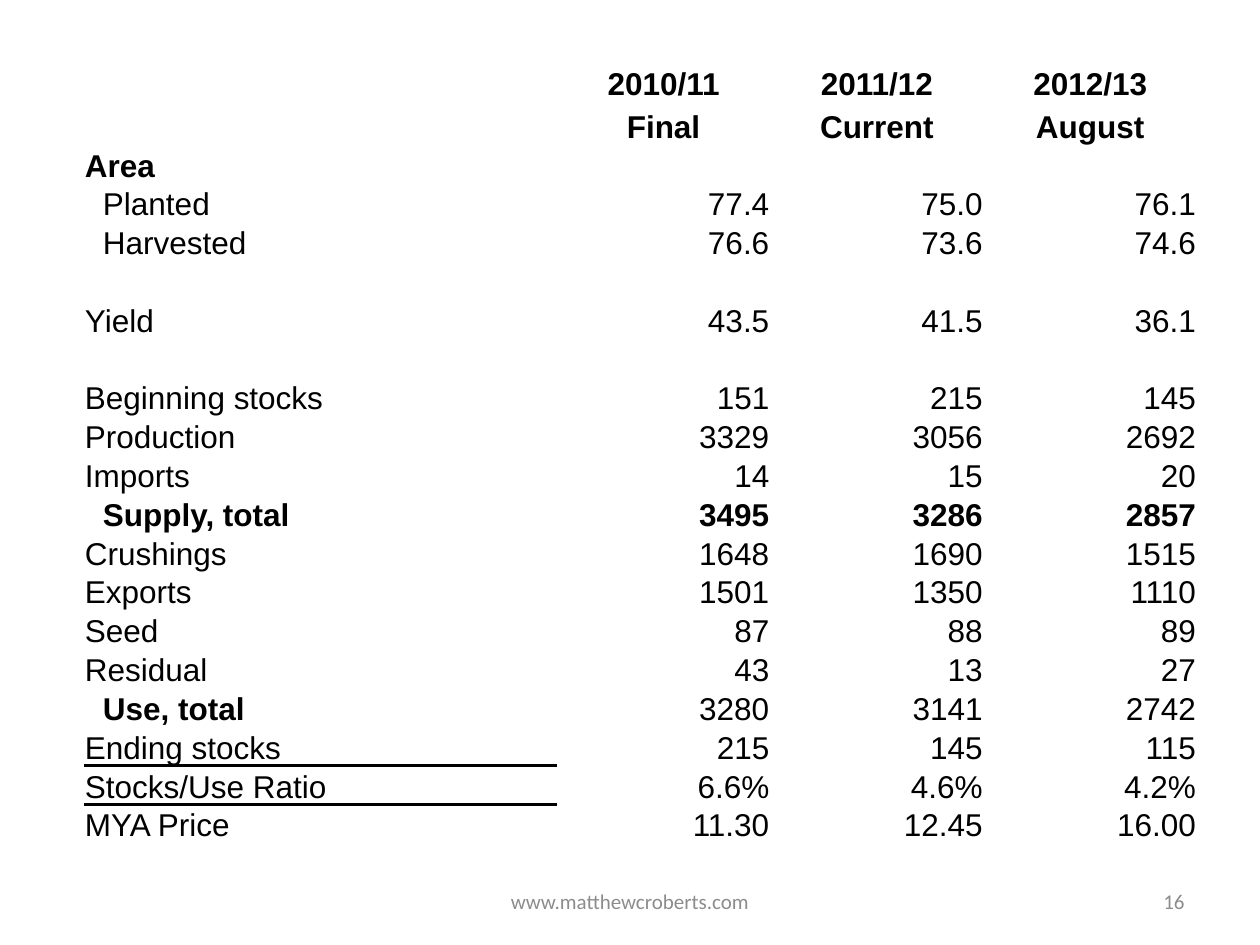
from dataclasses import dataclass

from lxml import etree
from pptx import Presentation
from pptx.dml.color import RGBColor
from pptx.enum.text import MSO_ANCHOR, PP_ALIGN
from pptx.oxml.ns import qn
from pptx.util import Emu, Pt

LEFT, CENTER, RIGHT = PP_ALIGN.LEFT, PP_ALIGN.CENTER, PP_ALIGN.RIGHT
MIDDLE, BOTTOM = MSO_ANCHOR.MIDDLE, MSO_ANCHOR.BOTTOM
EMU_PER_PX = 914400 // 126
PLAIN_TABLE_STYLE = "{2D5ABB26-0587-4C30-8999-92F81FD0307C}"

HEADINGS = [("", "2010/11", "2011/12", "2012/13"), ("", "Final", "Current", "August")]
BALANCE = [
    ("Area", "", "", ""),
    ("Planted", "77.4", "75.0", "76.1"),
    ("Harvested", "76.6", "73.6", "74.6"),
    ("", "", "", ""),
    ("Yield", "43.5", "41.5", "36.1"),
    ("", "", "", ""),
    ("Beginning stocks", "151", "215", "145"),
    ("Production", "3329", "3056", "2692"),
    ("Imports", "14", "15", "20"),
    ("Supply, total", "3495", "3286", "2857"),
    ("Crushings", "1648", "1690", "1515"),
    ("Exports", "1501", "1350", "1110"),
    ("Seed", "87", "88", "89"),
    ("Residual", "43", "13", "27"),
    ("Use, total", "3280", "3141", "2742"),
    ("Ending stocks", "215", "145", "115"),
    ("Stocks/Use Ratio", "6.6%", "4.6%", "4.2%"),
    ("MYA Price", "11.30", "12.45", "16.00"),
]
INDENTED = {"Planted", "Harvested", "Supply, total", "Use, total"}
BOLD_LABELS = {"Area", "Supply, total", "Use, total"}
BOLD_VALUES = {"Supply, total"}
RULED_SIDES = {"Ending stocks": "a:lnB", "Stocks/Use Ratio": "a:lnT"}


@dataclass(frozen=True)
class Theme:
    ink: str = "000000"
    muted: str = "8C8C8C"
    table_font: str = "Arial"
    footer_font: str = "Calibri"
    table_size: int = 18
    footer_size: int = 12
    rule_width: int = 2


def px(length):
    return Emu(length * EMU_PER_PX)


def apply(target, settings):
    for name, value in settings.items():
        setattr(target, name, value)


class SlideBuilder:
    def __init__(self, slide, theme):
        self.slide = slide
        self.theme = theme

    def add_text(self, paragraph, text, alignment, color, **font_settings):
        paragraph.alignment = alignment
        run = paragraph.add_run()
        run.text = text
        apply(run.font, font_settings)
        run.font.color.rgb = RGBColor.from_string(color)

    def footer(self, text, left, top, width, height, alignment):
        box = self.slide.shapes.add_textbox(px(left), px(top), px(width), px(height))
        apply(box.text_frame, {"word_wrap": True, "vertical_anchor": MIDDLE})
        self.add_text(box.text_frame.paragraphs[0], text, alignment, self.theme.muted,
                      name=self.theme.footer_font, size=Pt(self.theme.footer_size))

    def table(self, left, top, column_widths, row_heights):
        """Add an unstyled table; widths and heights are in EMU."""
        frame = self.slide.shapes.add_table(
            len(row_heights), len(column_widths), px(left), px(top),
            sum(column_widths), sum(row_heights))
        table = frame.table
        apply(table, {"first_row": False, "horz_banding": False})
        frame._element.find(".//" + qn("a:tableStyleId")).text = PLAIN_TABLE_STYLE
        for column, width in zip(table.columns, column_widths):
            column.width = width
        for row, height in zip(table.rows, row_heights):
            row.height = height
        return table

    def cell(self, cell, text, alignment, bold=False, indent=0):
        apply(cell, {"margin_left": px(1 + indent), "margin_right": px(1),
                     "margin_top": px(1), "margin_bottom": 0,
                     "vertical_anchor": BOTTOM})
        cell.fill.background()
        paragraph = cell.text_frame.paragraphs[0]
        if text:
            self.add_text(paragraph, text, alignment, self.theme.ink, bold=bold,
                          name=self.theme.table_font, size=Pt(self.theme.table_size))
        else:
            # Keeps an empty cell from stretching its row.
            end = paragraph._p.get_or_add_endParaRPr()
            end.set("sz", str(self.theme.footer_size * 100))

    def rule(self, cell, side):
        line = etree.Element(qn(side), w=str(Pt(self.theme.rule_width)))
        fill = etree.SubElement(line, qn("a:solidFill"))
        etree.SubElement(fill, qn("a:srgbClr"), val=self.theme.ink)
        cell._tc.get_or_add_tcPr().insert(0, line)

    def balance_sheet(self):
        columns = [px(473)] + [px(640) // 3] * 3
        rows = [px(39), px(43)] + [px(695) // len(BALANCE)] * len(BALANCE)
        table = self.table(84, 63, columns, rows)
        for row, values in enumerate(HEADINGS):
            for column, text in enumerate(values):
                self.cell(table.cell(row, column), text, CENTER, bold=True)
        for row, (label, *values) in enumerate(BALANCE, len(HEADINGS)):
            label_cell = table.cell(row, 0)
            self.cell(label_cell, label, LEFT, label in BOLD_LABELS,
                      indent=18 if label in INDENTED else 0)
            if label in RULED_SIDES:
                self.rule(label_cell, RULED_SIDES[label])
            for column, text in enumerate(values, 1):
                self.cell(table.cell(row, column), text, RIGHT, label in BOLD_VALUES)


def main():
    presentation = Presentation()
    apply(presentation, {"slide_width": px(1260), "slide_height": px(945)})
    blank_layout = presentation.slide_layouts[6]
    builder = SlideBuilder(presentation.slides.add_slide(blank_layout), Theme())
    builder.footer("www.matthewcroberts.com", 430, 876, 400, 50, CENTER)
    builder.footer("16", 903, 876, 294, 50, RIGHT)
    builder.balance_sheet()
    presentation.save("out.pptx")


if __name__ == "__main__":
    main()
